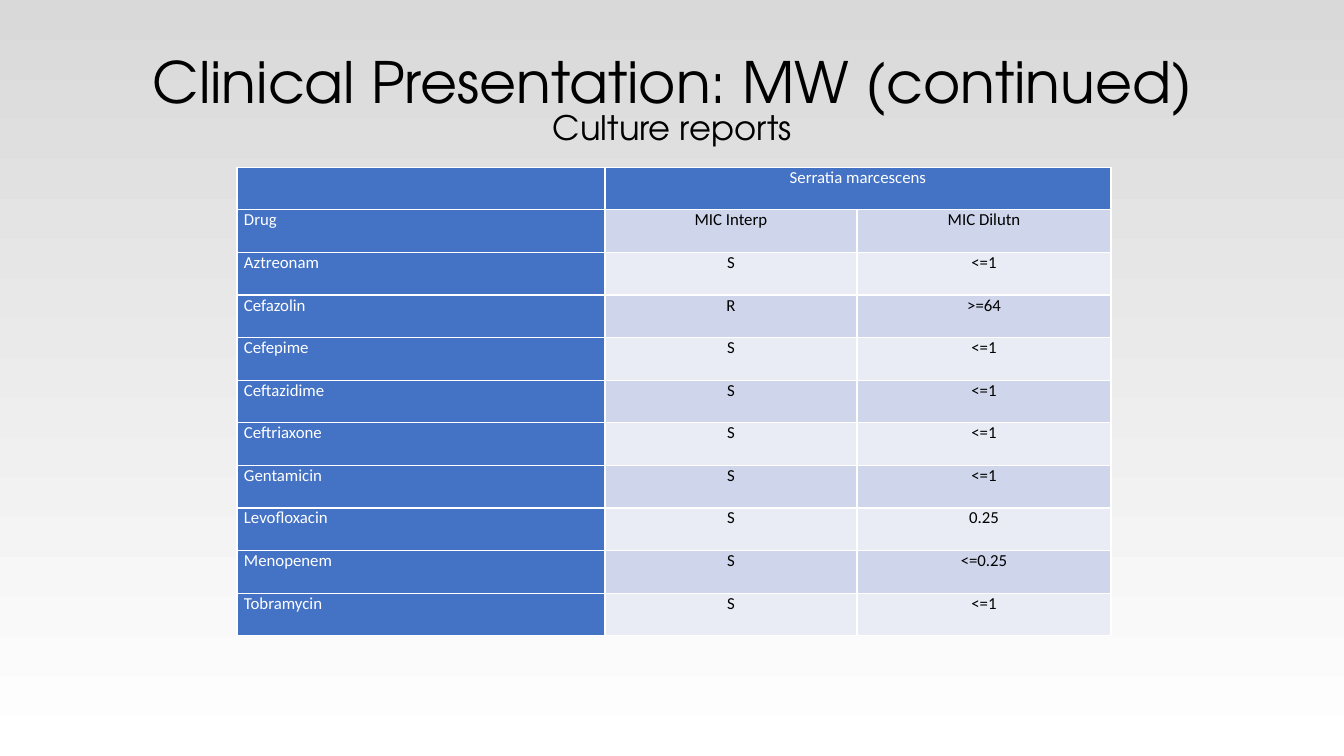
import pptx
import pptx.util
import pptx.dml.color
import pptx.enum.text
import lxml.etree
from pptx.oxml.ns import qn
from pptx.util import Inches

COLOURS = {"white": "FFFFFF", "grey": "D9D9D9", "black": "000000",
           "blue": "4472C4", "dark band": "CFD5EA", "light band": "E9EBF5"}
ALIGN = pptx.enum.text.PP_ALIGN
COLUMN_WIDTHS = (3.65, 2.5, 2.52)
TABLE_HEIGHT = 4.65
REPORT = (
    ("", "Serratia marcescens", ""),
    ("Drug", "MIC Interp", "MIC Dilutn"),
    ("Aztreonam", "S", "<=1"),
    ("Cefazolin", "R", ">=64"),
    ("Cefepime", "S", "<=1"),
    ("Ceftazidime", "S", "<=1"),
    ("Ceftriaxone", "S", "<=1"),
    ("Gentamicin", "S", "<=1"),
    ("Levofloxacin", "S", "0.25"),
    ("Menopenem", "S", "<=0.25"),
    ("Tobramycin", "S", "<=1"),
)


def colour(name):
    """Return the named colour."""
    return pptx.dml.color.RGBColor.from_string(COLOURS[name])


def set_paragraph(paragraph, text, font, size, shade, align):
    """Fill a paragraph with text in one style."""
    paragraph.text = text
    paragraph.alignment = align
    paragraph.font.name = font
    paragraph.font.size = pptx.util.Pt(size)
    paragraph.font.color.rgb = colour(shade)


def paint_background(page):
    """Shade the page from grey at the top to white at the bottom."""
    fill = page.background.fill
    fill.gradient()
    fill.gradient_angle = 90
    for stop, name, position in zip(fill.gradient_stops, ("white", "grey"), (0, 1)):
        stop.color.rgb = colour(name)
        stop.position = position


def add_title(page):
    """Add the title with its smaller second line."""
    box = page.shapes.add_textbox(Inches(0.92), Inches(0.46), Inches(11.5), Inches(1.45))
    frame = box.text_frame
    frame.word_wrap = True
    frame.vertical_anchor = pptx.enum.text.MSO_ANCHOR.MIDDLE
    title, subtitle = frame.paragraphs[0], frame.add_paragraph()
    lines = ((title, "Clinical Presentation: MW (continued)", 40.7),
             (subtitle, "Culture reports\v", 24.1))
    for paragraph, text, size in lines:
        set_paragraph(paragraph, text, "TeX Gyre Adventor", size, "black", ALIGN.CENTER)
        paragraph.line_spacing = 0.8


def add_borders(cell):
    """Draw thin white lines on all four sides of a cell."""
    properties = cell._tc.get_or_add_tcPr()
    for index, side in enumerate(("a:lnL", "a:lnR", "a:lnT", "a:lnB")):
        line = lxml.etree.Element(qn(side), w=str(pptx.util.Pt(1)))
        fill = lxml.etree.SubElement(line, qn("a:solidFill"))
        lxml.etree.SubElement(fill, qn("a:srgbClr"), val=COLOURS["white"])
        properties.insert(index, line)


def style_cell(cell, text, row, column):
    """Write and colour one cell according to its row and column."""
    heading = row == 0 or column == 0
    band = "dark band" if row % 2 else "light band"
    cell.margin_left = cell.margin_right = Inches(0.07)
    cell.margin_top = cell.margin_bottom = 0
    cell.fill.solid()
    cell.fill.fore_color.rgb = colour("blue" if heading else band)
    set_paragraph(cell.text_frame.paragraphs[0], text, "Calibri", 12,
                  "white" if heading else "black",
                  ALIGN.CENTER if column else ALIGN.LEFT)
    add_borders(cell)


def add_report(page):
    """Add the table of culture results."""
    frame = page.shapes.add_table(len(REPORT), len(COLUMN_WIDTHS), Inches(2.35), Inches(1.66),
                                  Inches(sum(COLUMN_WIDTHS)), Inches(TABLE_HEIGHT))
    table = frame.table
    for column, width in zip(table.columns, COLUMN_WIDTHS):
        column.width = Inches(width)
    for row, texts in enumerate(REPORT):
        table.rows[row].height = Inches(TABLE_HEIGHT / len(REPORT))
        for column, text in enumerate(texts):
            style_cell(table.cell(row, column), text, row, column)
    table.cell(0, 1).merge(table.cell(0, 2))


def main():
    """Build and save the slide."""
    deck = pptx.Presentation()
    deck.slide_width, deck.slide_height = Inches(13.33), Inches(7.5)
    page = deck.slides.add_slide(deck.slide_layouts[6])
    paint_background(page)
    add_title(page)
    add_report(page)
    deck.save("out.pptx")


if __name__ == "__main__":
    main()
